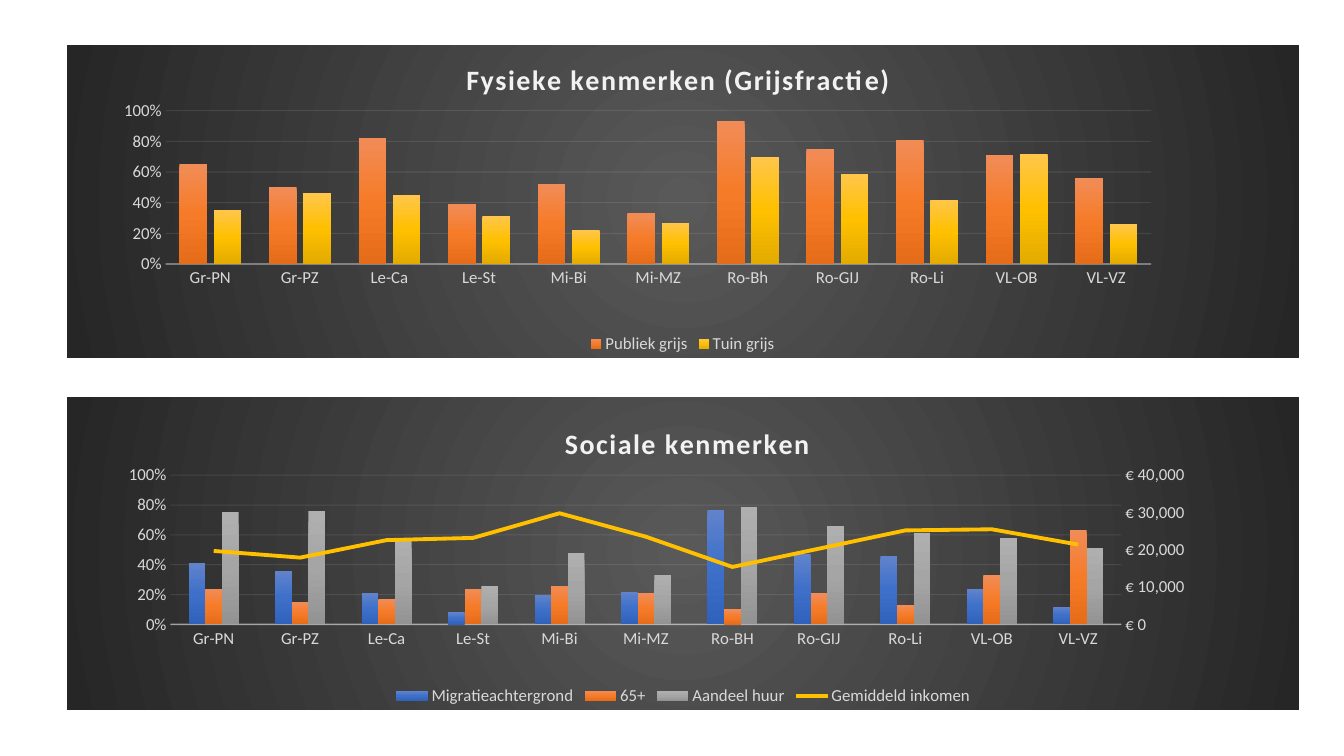
from dataclasses import dataclass

from pptx import Presentation
from pptx.chart.axis import ValueAxis
from pptx.chart.chart import Chart
from pptx.chart.data import CategoryChartData
from pptx.dml.chtfmt import ChartFormat
from pptx.dml.color import RGBColor
from pptx.enum.chart import XL_CHART_TYPE, XL_LEGEND_POSITION, XL_MARKER_STYLE, XL_TICK_MARK
from pptx.oxml import parse_xml
from pptx.oxml.ns import nsdecls
from pptx.util import Pt

COLUMNS = XL_CHART_TYPE.COLUMN_CLUSTERED
LEGEND_BOTTOM = XL_LEGEND_POSITION.BOTTOM
NO_MARKER = XL_MARKER_STYLE.NONE
NO_TICK = XL_TICK_MARK.NONE

EMU_PER_PX = 914400 / 100.8
FONT = "Calibri"
LABEL_COLOR = "D9D9D9"
LIGHT = "F2F2F2"
INCOME_COLOR = "FFC000"
BLUE = ("6183CB", "3E70CA", "3062BB")
ORANGE = ("F18C57", "F67B28", "E56C19")
GREY = ("AFAFAF", "A5A5A5", "939393")
YELLOW = ("FFC64B", "FFC000", "E3AB00")
BACKGROUND = ("595959", "262626")
LINEAR = '<a:lin ang="5400000" scaled="0"/>'
RADIAL = ('<a:path path="circle"><a:fillToRect l="50000" t="50000" '
          'r="50000" b="50000"/></a:path>')


@dataclass
class Columns:
    name: str
    percentages: list[int]
    gradient: tuple[str, ...]


@dataclass
class Panel:
    title: str
    top: int
    categories: list[str]
    columns: list[Columns]
    gap: int
    overlap: int
    title_at: tuple[float, float]
    plot_box: tuple[float, float, float, float]
    incomes: list[int]


def neighbourhoods(bh: str) -> list[str]:
    """Category names; the two charts spell the Ro-Bh one differently."""
    return ["Gr-PN", "Gr-PZ", "Le-Ca", "Le-St", "Mi-Bi", "Mi-MZ",
            bh, "Ro-GIJ", "Ro-Li", "VL-OB", "VL-VZ"]


PANELS = [
    Panel("Fysieke kenmerken (Grijsfractie)", 45, neighbourhoods("Ro-Bh"), [
        Columns("Publiek grijs", [65, 50, 82, 39, 52, 33, 93, 75, 81, 71, 56], ORANGE),
        Columns("Tuin grijs", [35, 46, 45, 31, 22, 27, 70, 59, 42, 72, 26], YELLOW),
    ], 100, -24, (0.32, 0.03), (0.08, 0.21, 0.8, 0.49), []),
    Panel("Sociale kenmerken", 397, neighbourhoods("Ro-BH"), [
        Columns("Migratieachtergrond", [41, 36, 21, 8, 20, 22, 77, 47, 46, 24, 12], BLUE),
        Columns("65+", [24, 15, 17, 24, 26, 21, 10, 21, 13, 33, 63], ORANGE),
        Columns("Aandeel huur", [75, 76, 57, 26, 48, 33, 79, 66, 61, 58, 51], GREY),
    ], 219, 0, (0.4, 0.07), (0.084, 0.25, 0.772, 0.477),
        [19700, 17900, 22600, 23200, 29800, 23500, 15400, 20300, 25200, 25500, 21400]),
]


def px(length: float) -> int:
    return round(length * EMU_PER_PX)


def rgb(color: str) -> RGBColor:
    return RGBColor.from_string(color)


def style_font(font, size: float = 12, color: str = LABEL_COLOR, bold: bool = False) -> None:
    font.name, font.size, font.bold = FONT, Pt(size), bold
    font.color.rgb = rgb(color)


def add_title(chart: Chart, text: str, *, size: float, color: str, spacing: int) -> None:
    paragraph = chart.chart_title.text_frame.paragraphs[0]
    run = paragraph.add_run()
    run.text = text
    style_font(run.font, size, color, bold=True)
    run.font._element.set("spc", str(spacing))


def gradient_xml(colors: tuple[str, ...], direction: str) -> str:
    """Gradient with evenly spaced stops."""
    step = 100000 // (len(colors) - 1)
    stops = "".join(f'<a:gs pos="{index * step}"><a:srgbClr val="{color}"/></a:gs>'
                    for index, color in enumerate(colors))
    return f'<a:gradFill {nsdecls("a")}><a:gsLst>{stops}</a:gsLst>{direction}</a:gradFill>'


def style_line(chart_format: ChartFormat, width: float, opacity: int) -> None:
    chart_format.line.width = Pt(width)
    chart_format.line.color.rgb = rgb(LIGHT)
    for color in chart_format._element.xpath("c:spPr/a:ln//a:srgbClr"):
        color.append(parse_xml(f'<a:alpha {nsdecls("a")} val="{opacity * 1000}"/>'))


def style_axis(axis, line_visible: bool = False) -> None:
    axis.major_tick_mark = axis.minor_tick_mark = NO_TICK
    style_font(axis.tick_labels.font)
    if line_visible:
        style_line(axis.format, 1, 54)
    else:
        axis.format.line.fill.background()


def style_scale(axis: ValueAxis, maximum: float, unit: float, number_format: str) -> None:
    axis.minimum_scale, axis.maximum_scale, axis.major_unit = 0, maximum, unit
    axis.tick_labels.number_format = number_format
    axis.tick_labels.number_format_is_linked = False
    style_axis(axis)


def set_layout(parent, position: int, place: tuple[float, ...], inner: bool = False) -> None:
    """Fix x, y and, if given, width and height as fractions of the chart."""
    for layout in parent.xpath("c:layout"):
        parent.remove(layout)
    target = '<c:layoutTarget val="inner"/>' if inner else ""
    modes = '<c:xMode val="edge"/><c:yMode val="edge"/>'
    values = "".join(f'<c:{key} val="{value}"/>' for key, value in zip("xywh", place))
    parent.insert(position, parse_xml(
        f'<c:layout {nsdecls("c")}><c:manualLayout>{target}{modes}{values}'
        '</c:manualLayout></c:layout>'))


def move_income_to_right_axis(chart: Chart) -> None:
    """Turn the last column series into a line on a second value axis."""
    plot_area = chart._chartSpace.chart.plotArea
    bars = plot_area.xpath("c:barChart")[0]
    income = bars.xpath("c:ser")[-1]
    for inverted in income.xpath("c:invertIfNegative"):
        income.remove(inverted)
    lines = parse_xml(
        f'<c:lineChart {nsdecls("c")}><c:grouping val="standard"/><c:varyColors val="0"/>'
        '<c:marker val="1"/><c:axId val="501"/><c:axId val="502"/></c:lineChart>')
    lines.insert(2, income)
    bars.addnext(lines)

    def append_axis(tag: str, number: int, crossed: int, side: str, deleted: int, crosses: str):
        axis = parse_xml(
            f'<c:{tag} {nsdecls("c")}><c:axId val="{number}"/>'
            '<c:scaling><c:orientation val="minMax"/></c:scaling>'
            f'<c:delete val="{deleted}"/><c:axPos val="{side}"/>'
            f'<c:tickLblPos val="nextTo"/><c:crossAx val="{crossed}"/>'
            f'<c:crosses val="{crosses}"/></c:{tag}>')
        plot_area.xpath("c:valAx")[-1].addnext(axis)
        return axis

    right_axis = append_axis("valAx", 502, 501, "r", 0, "max")
    append_axis("catAx", 501, 502, "b", 1, "autoZero")
    style_scale(ValueAxis(right_axis), 40000, 10000, '"€ "#,##0')

    series = chart.plots[1].series[0]
    series.smooth = False
    series.marker.style = NO_MARKER
    series.format.line.color.rgb = rgb(INCOME_COLOR)
    series.format.line.width = Pt(2.75)


def draw_panel(slide, panel: Panel) -> None:
    data = CategoryChartData(number_format="0%")
    data.categories = panel.categories
    for columns in panel.columns:
        data.add_series(columns.name, [value / 100 for value in columns.percentages])
    if panel.incomes:
        data.add_series("Gemiddeld inkomen", panel.incomes, '"€ "#,##0')
    chart = slide.shapes.add_chart(COLUMNS, px(67), px(panel.top), px(1232), px(313), data).chart
    style_font(chart.font, 10, "000000")
    chart._chartSpace.chart.addnext(parse_xml(
        f'<c:spPr {nsdecls("c", "a")}>{gradient_xml(BACKGROUND, RADIAL)}'
        '<a:ln><a:noFill/></a:ln></c:spPr>'))

    add_title(chart, panel.title, size=20, color=LIGHT, spacing=100)
    set_layout(chart.chart_title._element, 1, panel.title_at)
    set_layout(chart._chartSpace.chart.plotArea, 0, panel.plot_box, inner=True)
    chart.has_legend = True
    chart.legend.position = LEGEND_BOTTOM
    chart.legend.include_in_layout = False
    style_font(chart.legend.font)

    style_axis(chart.category_axis, line_visible=True)
    style_scale(chart.value_axis, 1, 0.2, "0%")
    style_line(chart.value_axis.major_gridlines.format, 0.75, 10)

    plot = chart.plots[0]
    plot.gap_width, plot.overlap, plot.vary_by_categories = panel.gap, panel.overlap, False
    for series, columns in zip(plot.series, panel.columns):
        properties = series._element.get_or_add_spPr()
        properties.append(parse_xml(gradient_xml(columns.gradient, LINEAR)))
    if panel.incomes:
        move_income_to_right_axis(chart)


def main() -> None:
    presentation = Presentation()
    presentation.slide_width, presentation.slide_height = px(1344), px(756)
    slide = presentation.slides.add_slide(presentation.slide_layouts[6])
    for panel in PANELS:
        draw_panel(slide, panel)
    presentation.save("out.pptx")


if __name__ == "__main__":
    main()
